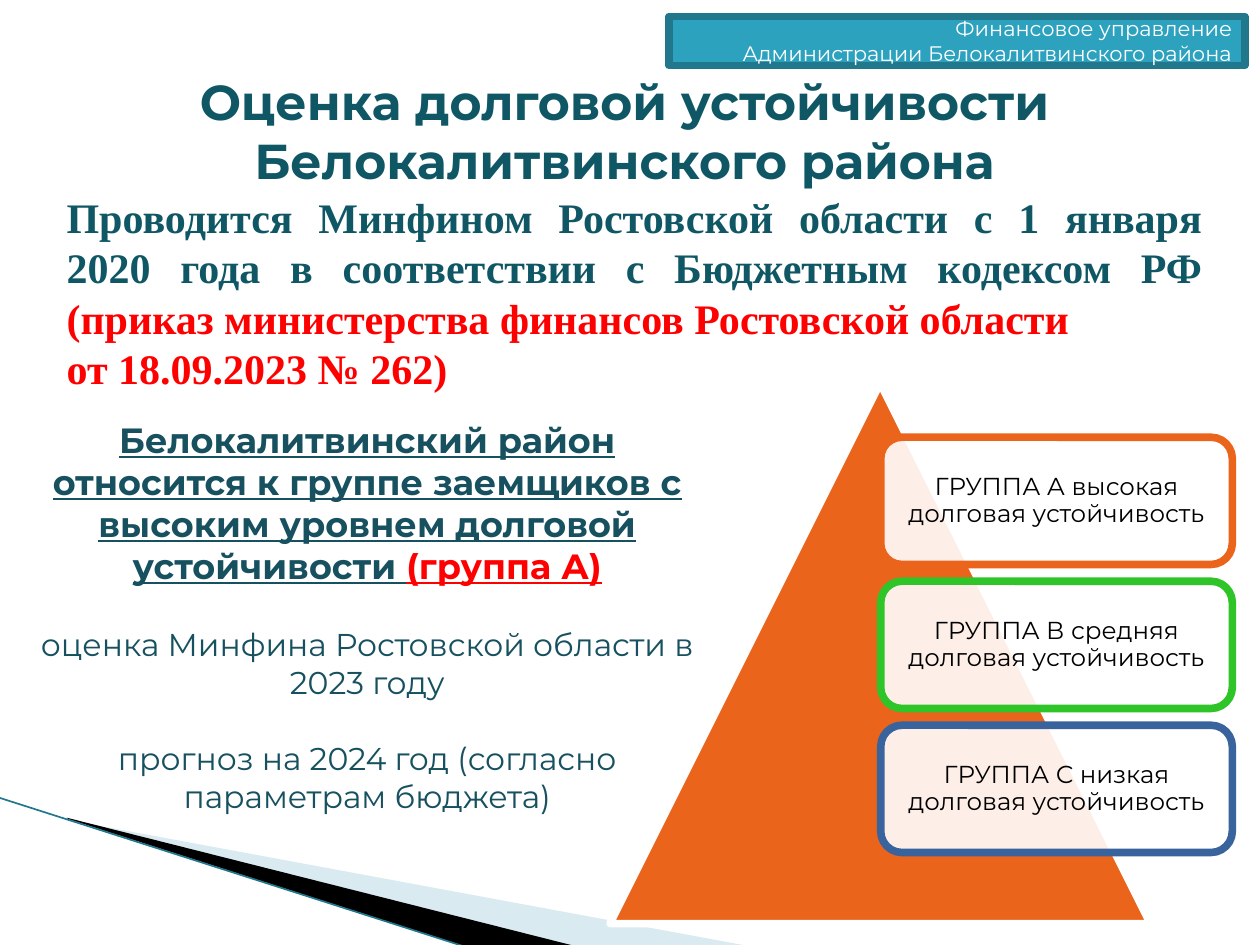
from lxml.etree import SubElement
from pptx import Presentation
from pptx.dml.color import RGBColor
from pptx.enum.shapes import MSO_CONNECTOR as Connector, MSO_SHAPE as Shape
from pptx.enum.text import MSO_ANCHOR as Anchor, MSO_AUTO_SIZE as AutoSize, PP_ALIGN as Align
from pptx.oxml.ns import qn
from pptx.util import Inches, Pt

COLORS = {
    "white": "FFFFFF", "black": "000000", "red": "FF0000",
    "heading": "105766", "conclusion": "175160",
    "banner": "2DA2BF", "banner_edge": "21788D", "pale_blue": "A0CBDC",
    "orange": "EB641B", "green": "2FC529", "blue": "39639D",
}
COLUMNS, ROWS = 100, 75
SANS, SERIF = "Montserrat", "Times New Roman"
BORDER = 4.33


def add_text(paragraph, text, *, size, color, font=SANS, bold=False, underline=False):
    run = paragraph.add_run()
    run.text = text
    run.font.name, run.font.size = font, Pt(size)
    run.font.bold, run.font.underline = bold, underline
    run.font.color.rgb = RGBColor.from_string(COLORS[color])


class SlideBuilder:
    """Places elements on a grid of COLUMNS by ROWS."""

    def __init__(self, deck):
        self.slide = deck.slides.add_slide(deck.slide_layouts[1])
        self.shapes = self.slide.shapes
        self.cell_w = deck.slide_width / COLUMNS
        self.cell_h = deck.slide_height / ROWS

    def point(self, column, row):
        return round(column * self.cell_w), round(row * self.cell_h)

    def box(self, column, row, width, height):
        return *self.point(column, row), *self.point(width, height)

    def paint(self, shape, fill, opacity=100, edge=None):
        shape.shadow.inherit = False
        shape.fill.solid()
        shape.fill.fore_color.rgb = RGBColor.from_string(COLORS[fill])
        if opacity < 100:
            color = shape._element.spPr.find(f"{qn('a:solidFill')}/{qn('a:srgbClr')}")
            SubElement(color, qn("a:alpha"), val=str(opacity * 1000))
        if edge:
            shape.line.color.rgb = RGBColor.from_string(COLORS[edge])
            shape.line.width = Pt(BORDER)
        else:
            shape.line.fill.background()

    def preset(self, kind, place, fill, edge, opacity=100):
        shape = self.shapes.add_shape(kind, *self.box(*place))
        self.paint(shape, fill, opacity, edge)
        return shape

    def outline(self, points, fill, opacity=100):
        start, *rest = [self.point(*p) for p in points]
        pen = self.shapes.build_freeform(*start)
        pen.add_line_segments(rest, close=True)
        self.paint(pen.convert_to_shape(), fill, opacity)

    def line(self, start, end, color, width):
        rule = self.shapes.add_connector(
            Connector.STRAIGHT, *self.point(*start), *self.point(*end))
        rule.line.color.rgb = RGBColor.from_string(COLORS[color])
        rule.line.width = Pt(width)
        SubElement(rule._element.spPr, qn("a:effectLst"))

    def text_box(self, place):
        return self.shapes.add_textbox(*self.box(*place))

    def placeholder(self, index, place):
        holder = self.slide.placeholders[index]
        holder.left, holder.top, holder.width, holder.height = self.box(*place)
        return holder

    def fill_text(self, shape, paragraphs, align, anchor=Anchor.TOP, inset=None,
                  gap=0, spacing=1.0, plain=False, **style):
        """Each paragraph is a list of (text, format overrides) pairs."""
        frame = shape.text_frame
        frame.word_wrap, frame.auto_size = True, AutoSize.NONE
        frame.vertical_anchor = anchor
        if inset is not None:
            frame.margin_left = frame.margin_right = Inches(inset)
            frame.margin_top = frame.margin_bottom = Inches(inset)
        for number, parts in enumerate(paragraphs):
            paragraph = frame.add_paragraph() if number else frame.paragraphs[0]
            paragraph.alignment = align
            paragraph.line_spacing = spacing
            paragraph.space_before = Pt(gap if number else 0)
            paragraph.space_after = Pt(0)
            if plain:  # no bullet, no hanging indent
                properties = paragraph._p.get_or_add_pPr()
                properties.set("marL", "0")
                properties.set("indent", "0")
                SubElement(properties, qn("a:buNone"))
            for text, changes in parts:
                add_text(paragraph, text, **{**style, **changes})


def main():
    deck = Presentation()
    deck.slide_width, deck.slide_height = Inches(10), Inches(7.5)
    page = SlideBuilder(deck)

    # Corner decoration
    page.outline([(5.5, 65.1), (59.5, 75.1), (45.6, 75.1), (5.5, 65)], "pale_blue", 40)
    page.outline([(5.3, 64.9), (45.7, 75.1), (37.2, 75.2), (5.4, 65)], "black")
    page.line((-0.1, 63.3), (37.1, 75.2), "banner_edge", 0.95)

    # Department banner
    banner = page.preset(Shape.RECTANGLE, (53.1, 1.3, 45.7, 3.9), "banner", "banner_edge")
    page.fill_text(banner, [[("Финансовое управление", {})],
                            [("Администрации Белокалитвинского района", {})]],
                   Align.RIGHT, Anchor.MIDDLE, size=12, color="white")

    # Title and legal basis
    title = page.placeholder(0, (3.5, 5.2, 92.1, 10.4))
    page.fill_text(title, [[("Оценка долговой устойчивости Белокалитвинского района", {})]],
                   Align.CENTER, size=28, color="heading", bold=True)
    basis = page.text_box((4.3, 14.7, 92.1, 17.2))
    red = {"color": "red"}
    page.fill_text(basis, [
        [("Проводится Минфином Ростовской области с 1 января 2020 года "
          "в соответствии с Бюджетным кодексом РФ ", {}),
         ("(приказ министерства финансов Ростовской области ", red)],
        [("от 18.09.2023 № 262)", red)],
    ], Align.JUSTIFY, size=24, color="heading", font=SERIF, bold=True)

    # Pyramid of borrower groups
    page.preset(Shape.ISOSCELES_TRIANGLE, (48.4, 30.4, 42.9, 42.9), "orange", "white")
    groups = [("А высокая", "orange"), ("В средняя", "green"), ("С низкая", "blue")]
    for level, (group, edge) in enumerate(groups):
        card = page.preset(Shape.ROUNDED_RECTANGLE,
                           (69.9, 34.7 + 11.43 * level, 27.9, 10.1), "white", edge, 90)
        page.fill_text(card, [[(f"ГРУППА {group} долговая устойчивость", {})]],
                       Align.CENTER, Anchor.MIDDLE, inset=0.06, spacing=0.9,
                       size=14, color="black")

    # Conclusion for the district
    conclusion = page.placeholder(1, (1.2, 32, 55.9, 33.9))
    strong = {"size": 20, "bold": True, "underline": True}
    page.fill_text(conclusion, [
        [("Белокалитвинский район относится к группе заемщиков "
          "с высоким уровнем долговой устойчивости ", strong),
         ("(группа А)", {**strong, **red})],
        [("оценка Минфина Ростовской области в 2023 году", {})],
        [("прогноз на 2024 год (согласно параметрам бюджета)", {})],
    ], Align.CENTER, Anchor.MIDDLE, gap=22, plain=True, size=18, color="conclusion")

    deck.save("out.pptx")


if __name__ == "__main__":
    main()
